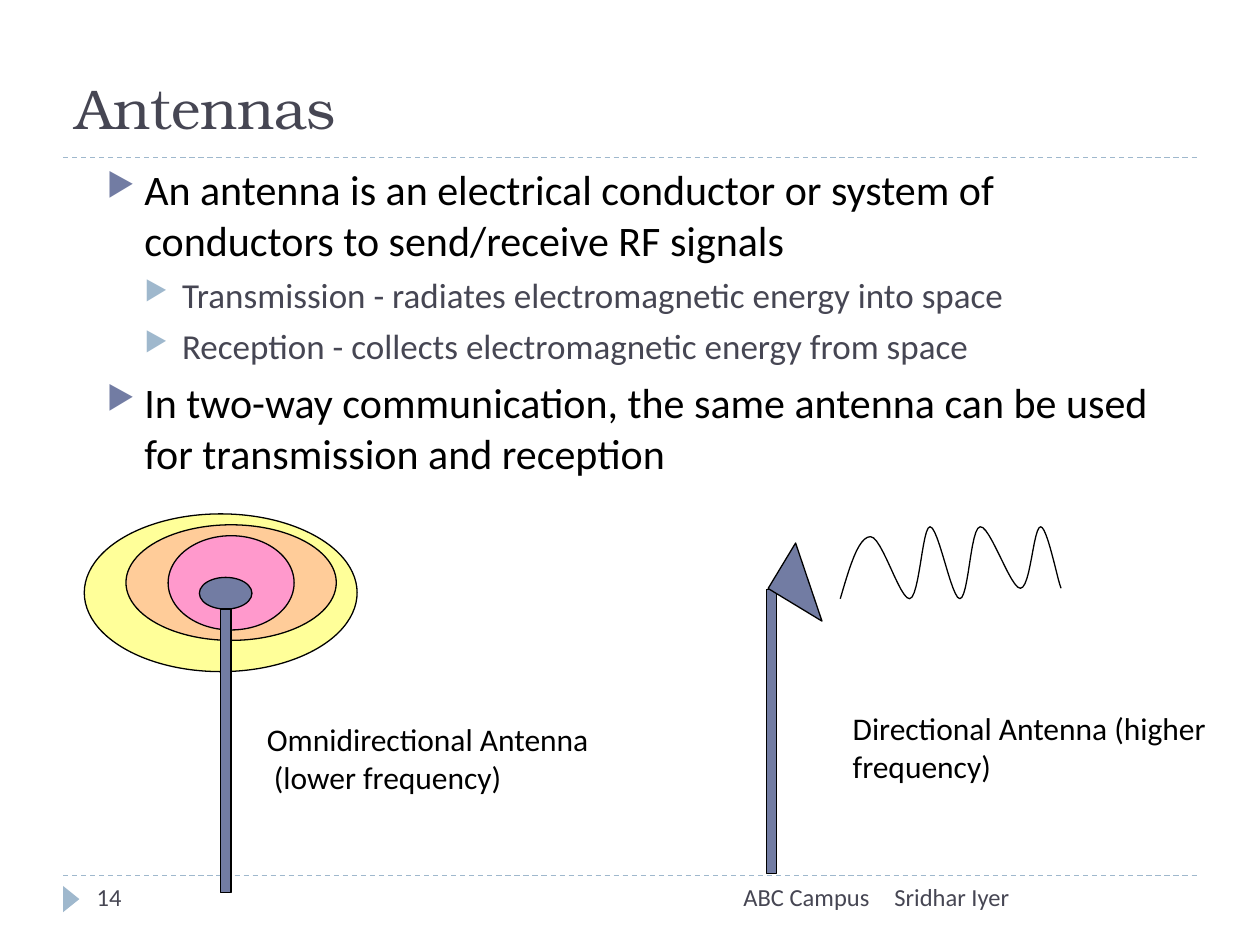
from itertools import pairwise

from lxml.etree import SubElement
from pptx import Presentation
from pptx.dml.color import RGBColor
from pptx.enum.dml import MSO_LINE
from pptx.enum.shapes import MSO_CONNECTOR, MSO_SHAPE as Preset
from pptx.enum.text import MSO_ANCHOR as Anchor, PP_ALIGN as Align
from pptx.oxml.ns import qn
from pptx.util import Cm, Pt

COLORS = {
    "ink": "000000",
    "slate": "464653",
    "indigo": "727CA3",
    "sky": "9FB8CD",
    "yellow": "FFFF99",
    "peach": "FFCC99",
    "pink": "FF99CC",
}

BULLETS = [
    (0, "An antenna is an electrical conductor or system of conductors to send/receive RF signals"),
    (1, "Transmission - radiates electromagnetic energy into space"),
    (1, "Reception - collects electromagnetic energy from space"),
    (0, "In two-way communication, the same antenna can be used for transmission and reception"),
]

LEVELS = [
    {"size": 24, "color": "ink", "bullet": "indigo", "before": 6},
    {"size": 20, "color": "slate", "bullet": "sky", "before": 5},
]

LOBES = [
    ((1.7, 10.36, 5.5, 3.18), "yellow"),
    ((2.54, 10.58, 4.24, 2.33), "peach"),
    ((3.39, 10.8, 2.54, 1.9), "pink"),
    ((4.02, 11.64, 1.06, 0.64), "indigo"),
]

WAVE_START = (16.94, 12.07)
WAVE_CURVES = [
    ((17.12, 11.46), (17.3, 10.82), (17.55, 10.82)),
    ((17.78, 10.82), (18.14, 12.09), (18.34, 12.07)),
    ((18.54, 12.04), (18.59, 10.62), (18.75, 10.62)),
    ((18.92, 10.62), (19.18, 12.07), (19.35, 12.07)),
    ((19.53, 12.07), (19.56, 10.64), (19.76, 10.62)),
    ((19.96, 10.59), (20.37, 11.86), (20.57, 11.86)),
    ((20.78, 11.86), (20.83, 10.62), (20.98, 10.62)),
    ((21.11, 10.62), (21.31, 11.65), (21.39, 11.86)),
]


def rgb(name):
    """Return the named colour."""
    return RGBColor.from_string(COLORS[name])


def write(paragraph, text, *, size, color="ink", font="Calibri", align=Align.LEFT):
    """Add formatted text to a paragraph."""
    paragraph.alignment = align
    run = paragraph.add_run()
    run.text = text
    run.font.size = Pt(size)
    run.font.name = font
    run.font.color.rgb = rgb(color)


def curve_points(start, curves, steps=12):
    """Return points along a chain of cubic curves."""
    ends = [start] + [curve[-1] for curve in curves]
    points = []
    for (begin, _), curve in zip(pairwise(ends), curves):
        for step in range(1, steps + 1):
            t = step / steps
            weights = ((1 - t) ** 3, 3 * t * (1 - t) ** 2, 3 * t**2 * (1 - t), t**3)
            controls = (begin, *curve)
            points.append(tuple(
                Cm(sum(w * control[axis] for w, control in zip(weights, controls)))
                for axis in (0, 1)
            ))
    return points


class SlideBuilder:
    """Hold the drawing style and the current slide."""

    def __init__(self, slide, outline="ink", line_width=0.75):
        """Store the slide and the outline style."""
        self.shapes = slide.shapes
        self.outline = outline
        self.line_width = Pt(line_width)

    def rule(self, y):
        """Draw a dashed line across the slide."""
        connector = self.shapes.add_connector(
            MSO_CONNECTOR.STRAIGHT, Cm(1.27), Cm(y), Cm(24.13), Cm(y))
        connector.line.color.rgb = rgb("sky")
        connector.line.width = self.line_width
        connector.line.dash_style = MSO_LINE.DASH
        SubElement(connector._element.spPr, qn("a:effectLst"))

    def shape(self, preset, box, fill, rotation=0, outlined=True):
        """Draw a filled preset shape."""
        shape = self.shapes.add_shape(preset, *map(Cm, box))
        shape.shadow.inherit = False
        shape.rotation = rotation
        shape.fill.solid()
        shape.fill.fore_color.rgb = rgb(fill)
        if outlined:
            self.stroke(shape)
        else:
            shape.line.fill.background()

    def stroke(self, shape):
        """Give a shape the common outline."""
        shape.line.color.rgb = rgb(self.outline)
        shape.line.width = self.line_width

    def curve(self, start, curves):
        """Draw an open curved outline."""
        builder = self.shapes.build_freeform(*map(Cm, start))
        builder.add_line_segments(curve_points(start, curves), close=False)
        shape = builder.convert_to_shape()
        shape.shadow.inherit = False
        shape.fill.background()
        self.stroke(shape)

    def frame(self, box, anchor=Anchor.TOP):
        """Add a wrapping text box and return its text frame."""
        frame = self.shapes.add_textbox(*map(Cm, box)).text_frame
        frame.word_wrap = True
        frame.vertical_anchor = anchor
        return frame

    def text(self, box, *lines, anchor=Anchor.TOP, **style):
        """Add a text box with one paragraph for each line."""
        frame = self.frame(box, anchor)
        for index, line in enumerate(lines):
            paragraph = frame.add_paragraph() if index else frame.paragraphs[0]
            write(paragraph, line, **style)

    def bullets(self, box, items):
        """Add a bulleted list with two levels."""
        frame = self.frame(box)
        for index, (level, text) in enumerate(items):
            style = LEVELS[level]
            paragraph = frame.add_paragraph() if index else frame.paragraphs[0]
            paragraph.level = level
            paragraph.space_before = Pt(style["before"])
            write(paragraph, text, size=style["size"], color=style["color"])
            properties = paragraph._p.get_or_add_pPr()
            properties.set("marL", str(Cm(0.76 * (level + 1))))
            properties.set("indent", str(Cm(-0.76)))
            color = SubElement(properties, qn("a:buClr"))
            SubElement(color, qn("a:srgbClr"), val=COLORS[style["bullet"]])
            SubElement(properties, qn("a:buSzPct"), val="76000")
            SubElement(properties, qn("a:buChar"), char="▶")


def main():
    """Build the antenna slide."""
    presentation = Presentation()
    presentation.slide_width, presentation.slide_height = Cm(25.4), Cm(19.05)
    slide = SlideBuilder(presentation.slides.add_slide(presentation.slide_layouts[6]))

    for y in (17.65, 3.18):
        slide.rule(y)
    slide.shape(Preset.ISOSCELES_TRIANGLE, (1.17, 17.96, 0.53, 0.33), "sky",
                rotation=90, outlined=False)

    footer = {"size": 14, "color": "slate"}
    slide.text((17.78, 17.65, 6.35, 1.02), "Sridhar Iyer", **footer)
    slide.text((8.05, 17.65, 9.73, 1.02), "ABC Campus", align=Align.RIGHT, **footer)
    slide.text((1.7, 17.65, 5.51, 1.02), "14", **footer)

    slide.text((1.27, 0.43, 21.16, 2.54), "Antennas", anchor=Anchor.BOTTOM,
               size=32, color="slate", font="TeX Gyre Bonum")
    slide.bullets((1.9, 3.18, 21.59, 8.46), BULLETS)

    slide.text((5.13, 14.4, 9.12, 2.29), "Omnidirectional Antenna", " (lower frequency)", size=18)
    for box, fill in LOBES:
        slide.shape(Preset.OVAL, box, fill)
    for left, top in ((4.45, 12.28), (15.45, 11.89)):
        slide.shape(Preset.RECTANGLE, (left, top, 0.21, 5.72), "indigo")

    slide.shape(Preset.RIGHT_TRIANGLE, (15.67, 11.2, 1.27, 1.07), "indigo", rotation=31.2)
    slide.curve(WAVE_START, WAVE_CURVES)
    slide.text((16.94, 14.17, 7.92, 2.29), "Directional Antenna (higher frequency)", size=18)

    presentation.save("out.pptx")


if __name__ == "__main__":
    main()
